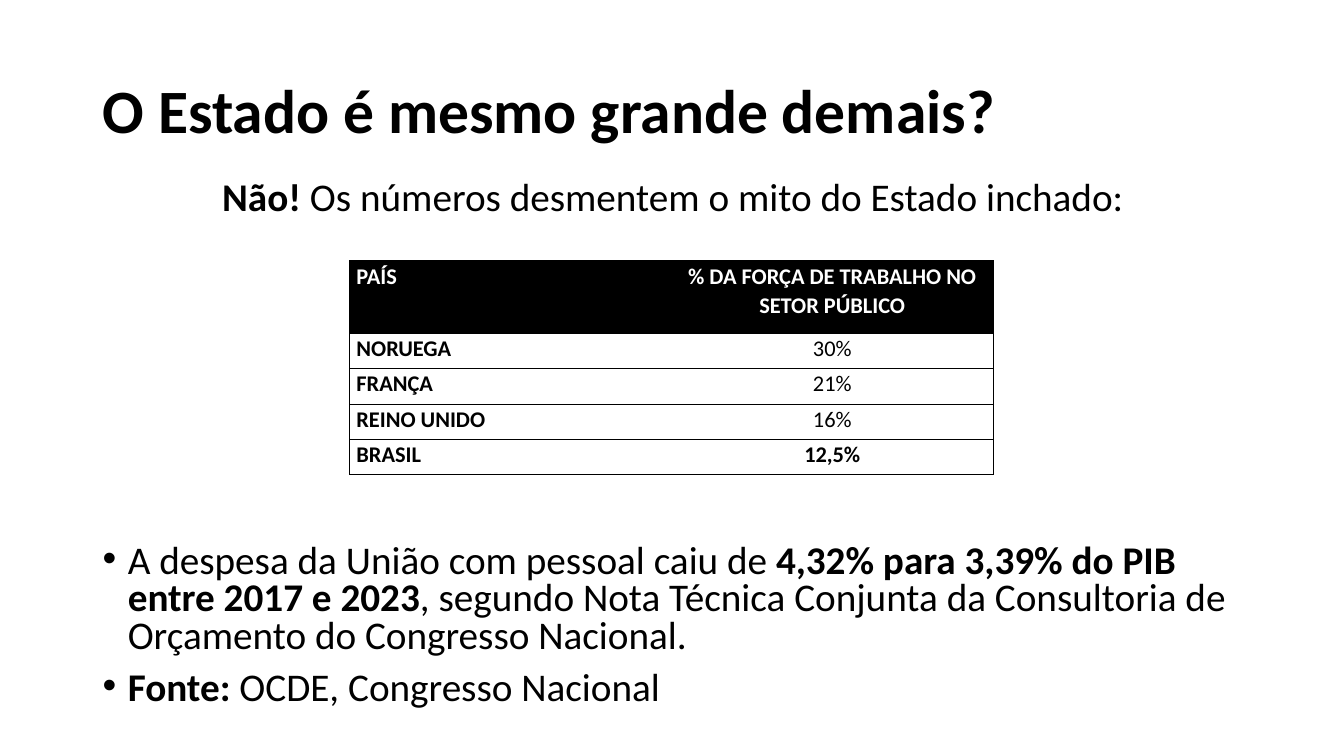
from dataclasses import dataclass

from lxml.etree import SubElement as Sub
from pptx import Presentation
from pptx.dml.color import RGBColor as Rgb
from pptx.enum.text import MSO_ANCHOR as Anchor, PP_ALIGN as Align
from pptx.oxml.ns import qn
from pptx.util import Inches, Pt


@dataclass(frozen=True)
class Theme:
    font: str = "Calibri"
    dark: str = "000000"
    light: str = "FFFFFF"
    title: int = 44
    body: int = 28
    cell: int = 16
    rule: float = 0.5


THEME = Theme()
WIDE, HIGH = 13.33, 7.5
LEFT, SPAN = 0.069, 0.863

ROWS = [
    ("PAÍS", "% DA FORÇA DE TRABALHO NO SETOR PÚBLICO"),
    ("NORUEGA", "30%"),
    ("FRANÇA", "21%"),
    ("REINO UNIDO", "16%"),
    ("BRASIL", "12,5%"),
]
INTRO = [("Não!", True), (" Os números desmentem o mito do Estado inchado:", False)]
NOTES = [
    [
        ("A despesa da União com pessoal caiu de ", False),
        ("4,32% para 3,39% do PIB entre 2017 e 2023", True),
        (", segundo Nota Técnica Conjunta da Consultoria de Orçamento do Congresso Nacional.", False),
    ],
    [("Fonte:", True), (" OCDE, Congresso Nacional", False)],
]


def place(x, y, w, h):
    return Inches(x * WIDE), Inches(y * HIGH), Inches(w * WIDE), Inches(h * HIGH)


def write(para, runs, size, color=THEME.dark, align=Align.LEFT, lead=0.8, before=0, after=0):
    para.alignment = align
    para.line_spacing = lead
    para.space_before, para.space_after = Pt(before), Pt(after)
    for text, bold in runs:
        run = para.add_run()
        run.text = text
        font = run.font
        font.name, font.size, font.bold = THEME.font, Pt(size), bold
        font.color.rgb = Rgb.from_string(color)


def bullet(para):
    props = para._p.get_or_add_pPr()
    props.set("marL", str(Inches(0.25)))
    props.set("indent", str(-Inches(0.25)))
    Sub(props, qn("a:buFont"), typeface="Arial")
    Sub(props, qn("a:buChar"), char="•")


def add_text(slide, spot, paras, size, anchor=Anchor.TOP, dots=False, **style):
    frame = slide.shapes.add_textbox(*place(*spot)).text_frame
    frame.word_wrap = True
    frame.vertical_anchor = anchor
    for i, runs in enumerate(paras):
        para = frame.add_paragraph() if i else frame.paragraphs[0]
        write(para, runs, size, **style)
        if dots:
            bullet(para)


def edge(cell, sides):
    props = cell._tc.get_or_add_tcPr()
    for side in "LRTB":
        line = Sub(props, qn(f"a:ln{side}"), w=str(Pt(THEME.rule)))
        if side in sides:
            fill = Sub(line, qn("a:solidFill"))
            Sub(fill, qn("a:srgbClr"), val=THEME.dark)
        else:
            Sub(line, qn("a:noFill"))


def add_grid(slide, spot, rows):
    grid = slide.shapes.add_table(len(rows), len(rows[0]), *place(*spot)).table
    for r, row in enumerate(rows):
        head, last = r == 0, r == len(rows) - 1
        grid.rows[r].height = Inches(0.35 if r else 0.72)
        for c, text in enumerate(row):
            cell = grid.cell(r, c)
            cell.margin_left = cell.margin_right = Inches(0.07)
            cell.margin_top = cell.margin_bottom = 0
            edge(cell, "RTB" if c else "LTB")
            cell.fill.solid()
            cell.fill.fore_color.rgb = Rgb.from_string(THEME.dark if head else THEME.light)
            write(
                cell.text_frame.paragraphs[0],
                [(text, head or last or c == 0)],
                THEME.cell,
                color=THEME.light if head else THEME.dark,
                align=Align.CENTER if c else Align.LEFT,
                lead=1.07,
                after=8,
            )


def main():
    deck = Presentation()
    deck.slide_width, deck.slide_height = Inches(WIDE), Inches(HIGH)
    slide = deck.slides.add_slide(deck.slide_layouts[6])
    add_text(
        slide, (LEFT, 0.053, SPAN, 0.193), [[("O Estado é mesmo grande demais?", True)]],
        THEME.title, anchor=Anchor.MIDDLE, lead=0.9,
    )
    add_text(slide, (LEFT, 0.233, SPAN, 0.08), [INTRO], THEME.body, align=Align.CENTER, before=10)
    add_grid(slide, (0.26, 0.345, 0.479, 0.284), ROWS)
    add_text(slide, (LEFT, 0.713, SPAN, 0.26), NOTES, THEME.body, dots=True, before=10)
    deck.save("out.pptx")


if __name__ == "__main__":
    main()
